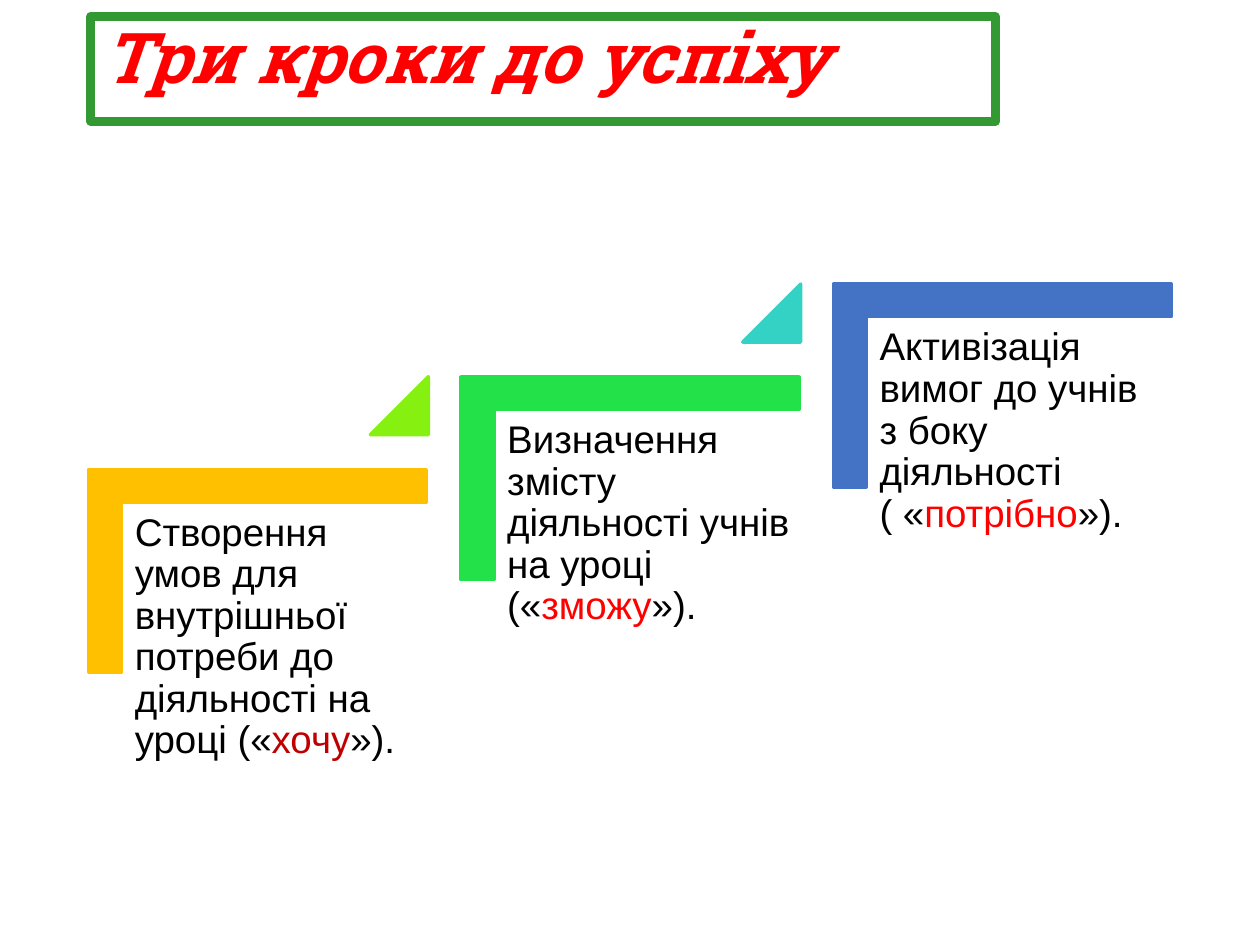
"""Build the slide "Три кроки до успіху": three rising steps with corner marks."""
import dataclasses
import typing

import pptx
import pptx.dml.color
import pptx.enum.shapes
import pptx.enum.text
import pptx.util

WIDE, HIGH = 10, 7.5
STEP_X, STEP_Y = 0.2955, -0.098
HUES = {
    "white": "FFFFFF", "black": "000000", "red": "FF0000", "wine": "C00000",
    "frame": "339933", "gold": "FFC000", "lime": "86F011", "green": "23E148",
    "teal": "33D2C5", "blue": "4472C4",
}
SHAPES = pptx.enum.shapes.MSO_SHAPE


@dataclasses.dataclass
class Box:
    """A frame given as shares of the slide's size."""
    left: float
    top: float
    width: float
    height: float

    def shift(self, step: int) -> "Box":
        """Move the frame along the stairs."""
        return Box(self.left + step * STEP_X, self.top + step * STEP_Y,
                   self.width, self.height)

    def spans(self) -> tuple:
        """Return left, top, width and height as lengths."""
        return tuple(pptx.util.Inches(share * side) for share, side in zip(
            (self.left, self.top, self.width, self.height), (WIDE, HIGH) * 2))


@dataclasses.dataclass
class Step:
    """One stair with its text, key word and colours."""
    text: str
    word: str
    tint: str
    hue: str
    mark: typing.Optional[str] = None


TITLE = Box(0.072, 0.0173, 0.718, 0.104)
CORNER = Box(0.124, 0.4253, 0.161, 0.3573)
LABEL = Box(0.098, 0.5307, 0.242, 0.2827)
MARK = Box(0.294, 0.3987, 0.046, 0.0613)
STEPS = [
    Step("Створення умов для внутрішньої потреби до діяльності на уроці («",
         "хочу", "wine", "gold", "lime"),
    Step("Визначення змісту діяльності учнів на уроці («",
         "зможу", "red", "green", "teal"),
    Step("Активізація вимог до учнів з боку діяльності ( «",
         "потрібно", "red", "blue"),
]


def tone(name: str) -> pptx.dml.color.RGBColor:
    """Look up a colour by name."""
    return pptx.dml.color.RGBColor.from_string(HUES[name])


def apply(item: typing.Any, form: dict) -> None:
    """Set each format value on an object."""
    for key, value in form.items():
        setattr(item, key, value)


def paint(shape: typing.Any, fill: str, line: str, width: float) -> None:
    """Give a shape its fill and outline."""
    shape.fill.solid()
    shape.fill.fore_color.rgb = tone(fill)
    shape.line.color.rgb = tone(line)
    shape.line.width = pptx.util.Pt(width)


def write(para: typing.Any, text: str, hue: str, form: dict) -> None:
    """Add one formatted run to a paragraph."""
    run = para.add_run()
    run.text = text
    apply(run.font, form)
    run.font.color.rgb = tone(hue)


def draw_mark(slide: typing.Any, kind: typing.Any, box: Box, hue: str,
              cuts: tuple, turn: int = 0) -> None:
    """Draw one plain preset shape."""
    shape = slide.shapes.add_shape(kind, *box.spans())
    shape.shadow.inherit = False
    shape.rotation = turn
    for index, cut in enumerate(cuts):
        shape.adjustments[index] = cut
    paint(shape, hue, hue, 2)


def draw_title(slide: typing.Any) -> None:
    """Place and format the title."""
    title = slide.shapes.title
    apply(title, dict(zip(("left", "top", "width", "height"), TITLE.spans())))
    paint(title, "white", "frame", 5)
    apply(title.text_frame, {
        "word_wrap": True,
        "vertical_anchor": pptx.enum.text.MSO_ANCHOR.TOP,
        "auto_size": pptx.enum.text.MSO_AUTO_SIZE.SHAPE_TO_FIT_TEXT,
    })
    para = title.text_frame.paragraphs[0]
    apply(para, {"alignment": pptx.enum.text.PP_ALIGN.LEFT, "line_spacing": 0.9})
    write(para, "Три кроки до успіху", "red", {
        "name": "Roboto Slab", "size": pptx.util.Pt(40),
        "bold": True, "italic": True})


def draw_step(slide: typing.Any, index: int, step: Step) -> None:
    """Draw a stair: corner, label and the mark leading onward."""
    draw_mark(slide, SHAPES.CORNER, CORNER.shift(index), step.hue,
              (0.161, 0.161), 90)
    frame = slide.shapes.add_textbox(*LABEL.shift(index).spans()).text_frame
    sides = ("left", "top", "right", "bottom")
    apply(frame, {f"margin_{side}": pptx.util.Inches(0.09) for side in sides})
    frame.word_wrap = True
    para = frame.paragraphs[0]
    para.line_spacing = 0.9
    form = {"name": "Arial", "size": pptx.util.Pt(22)}
    for text, hue in ((step.text, "black"), (step.word, step.tint),
                      ("»).", "black")):
        write(para, text, hue, form)
    if step.mark:
        draw_mark(slide, SHAPES.ISOSCELES_TRIANGLE, MARK.shift(index),
                  step.mark, (1,))


def main() -> None:
    """Build and save the deck."""
    deck = pptx.Presentation()
    apply(deck, {"slide_width": pptx.util.Inches(WIDE),
                 "slide_height": pptx.util.Inches(HIGH)})
    slide = deck.slides.add_slide(deck.slide_layouts.get_by_name("Title Only"))
    draw_title(slide)
    for index, step in enumerate(STEPS):
        draw_step(slide, index, step)
    deck.save("out.pptx")


if __name__ == "__main__":
    main()
